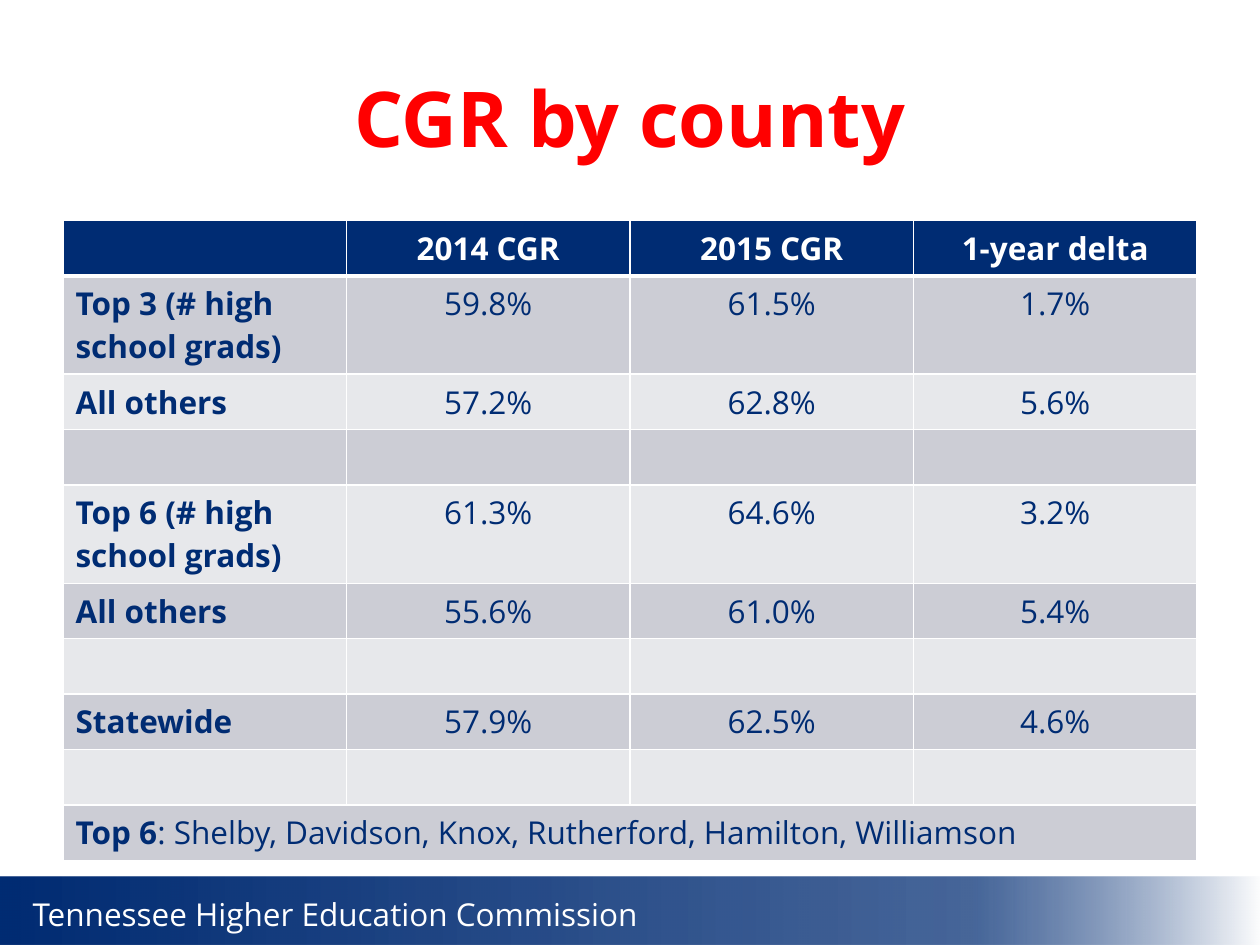
import pptx
import pptx.dml.color
import pptx.enum.shapes
import pptx.enum.text
import pptx.oxml
import pptx.oxml.ns
import pptx.util
from lxml import etree
from pptx.util import Inches

FONT = "Open Sans"
NAVY, RED, WHITE = "002C73", "FF0000", "FFFFFF"
BANDS = ("CCCDD5", "E7E8EB")

TITLE = "CGR by county"
FOOTER = "Tennessee Higher Education Commission"
HEADER = ("", "2014 CGR", "2015 CGR", "1-year delta")
BODY = [
    ("Top 3 (# high school grads)", "59.8%", "61.5%", "1.7%"),
    ("All others", "57.2%", "62.8%", "5.6%"),
    ("", "", "", ""),
    ("Top 6 (# high school grads)", "61.3%", "64.6%", "3.2%"),
    ("All others", "55.6%", "61.0%", "5.4%"),
    ("", "", "", ""),
    ("Statewide", "57.9%", "62.5%", "4.6%"),
    ("", "", "", ""),
]
NOTE = ("Top 6", ": Shelby, Davidson, Knox, Rutherford, Hamilton, Williamson")

ROW_HEIGHT, TALL_ROW_HEIGHT, COLUMN_WIDTH = 0.44, 0.78, 2.25
GRADIENT_STOPS = [(0, NAVY, 100), (77, NAVY, 72), (100, WHITE, 100)]

ALIGN = pptx.enum.text.PP_ALIGN
ANCHOR = pptx.enum.text.MSO_ANCHOR


def color(hex_string):
    return pptx.dml.color.RGBColor.from_string(hex_string)


def add_run(paragraph, text, size, hex_string, bold=False):
    run = paragraph.add_run()
    run.text = text
    formats = {"name": FONT, "size": pptx.util.Pt(size), "bold": bold}
    for attribute, value in formats.items():
        setattr(run.font, attribute, value)
    run.font.color.rgb = color(hex_string)


def add_text(slide, box, text, size, hex_string, bold, align, wrap):
    shape = slide.shapes.add_textbox(*map(Inches, box))
    frame = shape.text_frame
    frame.word_wrap = wrap
    frame.vertical_anchor = ANCHOR.MIDDLE
    paragraph = frame.paragraphs[0]
    paragraph.alignment = align
    add_run(paragraph, text, size, hex_string, bold)


def set_gradient(shape, stops):
    """Fill the shape left to right with (position %, colour, opacity %) stops."""
    stop_xml = "".join(
        f'<a:gs pos="{position * 1000}"><a:srgbClr val="{hex_string}">'
        f'<a:alpha val="{opacity * 1000}"/></a:srgbClr></a:gs>'
        for position, hex_string, opacity in stops
    )
    gradient = pptx.oxml.parse_xml(
        f'<a:gradFill {pptx.oxml.ns.nsdecls("a")} rotWithShape="1">'
        f'<a:gsLst>{stop_xml}</a:gsLst><a:lin ang="0" scaled="0"/></a:gradFill>'
    )
    geometry = shape._element.spPr.find(pptx.oxml.ns.qn("a:prstGeom"))
    geometry.addnext(gradient)


def set_borders(cell, bottom_width, top_width):
    """Put white lines around the cell, before its fill."""
    properties = cell._tc.get_or_add_tcPr()
    widths = {"lnL": 1, "lnR": 1, "lnT": top_width, "lnB": bottom_width}
    for index, (side, width) in enumerate(widths.items()):
        line = pptx.oxml.parse_xml(
            f'<a:{side} {pptx.oxml.ns.nsdecls("a")} w="{pptx.util.Pt(width)}">'
            f'<a:solidFill><a:srgbClr val="{WHITE}"/></a:solidFill></a:{side}>'
        )
        properties.insert(index, line)


def add_county_table(slide):
    rows = [HEADER, *BODY, ("",) * len(HEADER)]
    heights = [TALL_ROW_HEIGHT if "#" in row[0] else ROW_HEIGHT for row in rows]
    frame = slide.shapes.add_table(
        len(rows), len(HEADER), Inches(0.5), Inches(1.75),
        Inches(COLUMN_WIDTH * len(HEADER)), Inches(sum(heights)))
    table = frame.table
    for column in table.columns:
        column.width = Inches(COLUMN_WIDTH)
    for row_index, (row, height) in enumerate(zip(rows, heights)):
        is_header = row_index == 0
        table.rows[row_index].height = Inches(height)
        for column_index, text in enumerate(row):
            cell = table.cell(row_index, column_index)
            cell.fill.solid()
            cell.fill.fore_color.rgb = color(
                NAVY if is_header else BANDS[(row_index - 1) % 2])
            set_borders(cell, 3 if is_header else 1, 3 if row_index == 1 else 1)
            paragraph = cell.text_frame.paragraphs[0]
            if column_index:
                paragraph.alignment = ALIGN.CENTER
            if text:
                add_run(paragraph, text, 18, WHITE if is_header else NAVY,
                        bold=is_header or column_index == 0)
    last = len(rows) - 1
    note_cell = table.cell(last, 0)
    note_cell.merge(table.cell(last, len(HEADER) - 1))
    for text, bold in zip(NOTE, (True, False)):
        add_run(note_cell.text_frame.paragraphs[0], text, 18, NAVY, bold)


def main():
    presentation = pptx.Presentation()
    presentation.slide_width, presentation.slide_height = Inches(10), Inches(7.5)
    slide = presentation.slides.add_slide(presentation.slide_layouts[6])

    band = slide.shapes.add_shape(
        pptx.enum.shapes.MSO_SHAPE.RECTANGLE,
        *map(Inches, (0, 6.96, 10.02, 0.54)))
    band.shadow.inherit = False
    band.line.fill.background()
    set_gradient(band, GRADIENT_STOPS)

    add_text(slide, (0.16, 7.05, 5.05, 0.4), FOOTER, 18, WHITE, False, ALIGN.LEFT, False)
    add_text(slide, (0.5, 0.3, 9, 1.25), TITLE, 44, RED, True, ALIGN.CENTER, True)
    add_county_table(slide)
    presentation.save("out.pptx")


if __name__ == "__main__":
    main()
